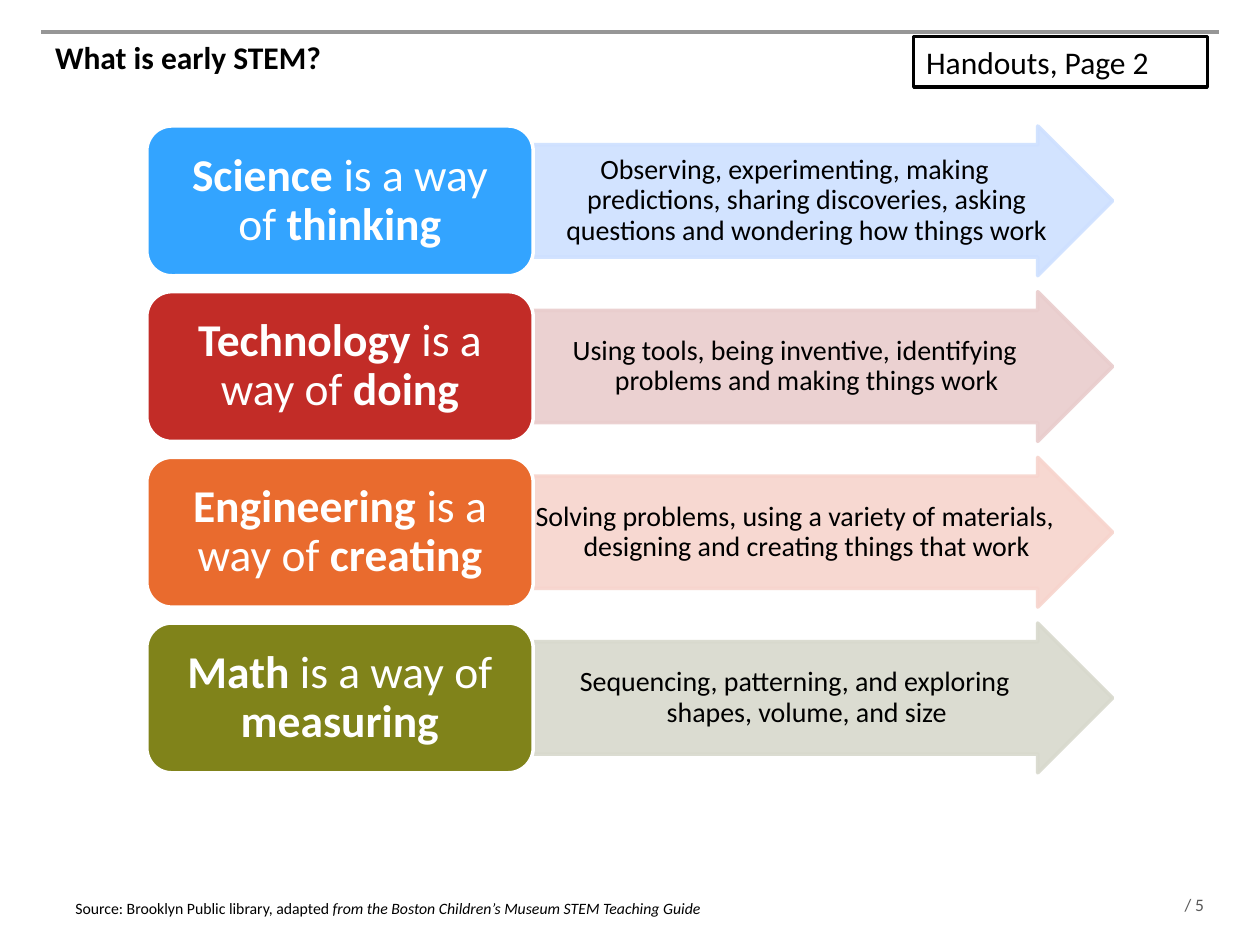
"""Build the slide that explains early STEM with four ways of working."""
from dataclasses import dataclass

from lxml import etree
from pptx import Presentation
from pptx.dml.color import RGBColor
from pptx.enum.shapes import MSO_CONNECTOR, MSO_SHAPE
from pptx.enum.text import MSO_ANCHOR, PP_ALIGN
from pptx.oxml.ns import qn
from pptx.util import Cm, Pt

ARROW, BOX, RECTANGLE = MSO_SHAPE.RIGHT_ARROW, MSO_SHAPE.ROUNDED_RECTANGLE, MSO_SHAPE.RECTANGLE
LEFT, CENTER = PP_ALIGN.LEFT, PP_ALIGN.CENTER
TOP, MIDDLE = MSO_ANCHOR.TOP, MSO_ANCHOR.MIDDLE

TITLE = "What is early STEM?"
HANDOUT = "Handouts, Page 2"
PAGE = "/ 5"
SOURCE = [("Source: Brooklyn Public library, adapted ", ""),
          ("from the Boston Children’s Museum STEM Teaching Guide", "i")]
SUBJECTS = [
    ("Science", "thinking", "33A4FF", "CEE0FF",
     "Observing, experimenting, making predictions, sharing discoveries, "
     "asking questions and wondering how things work"),
    ("Technology", "doing", "C22C27", "E9CDCD",
     "Using tools, being inventive, identifying problems and making things work"),
    ("Engineering", "creating", "E96B2E", "F7D4CD",
     "Solving problems, using a variety of materials, designing and creating things that work"),
    ("Math", "measuring", "80831A", "D8D9CD",
     "Sequencing, patterning, and exploring shapes, volume, and size"),
]

ROW_TOP, ROW_PITCH, ROW_HEIGHT = 2.54, 3.34, 3.02
BOX_LEFT, BOX_WIDTH, ARROW_WIDTH = 2.96, 7.79, 11.68


@dataclass(frozen=True)
class Theme:
    font: str = "Calibri"
    black: str = "000000"
    white: str = "FFFFFF"
    rule: str = "969696"
    page: str = "595959"
    title_size: int = 18
    subject_size: int = 26
    detail_size: int = 16
    source_size: int = 9
    page_size: int = 10
    line_width: int = 2


THEME = Theme()


def write_text(shape, text, size, color=THEME.black, style="", align=LEFT, anchor=TOP,
               margins=(0.25, 0.13), spacing=None, hanging=None, wrap=True):
    """Fill a shape with one paragraph; text is a string or (text, style) runs."""
    frame = shape.text_frame
    frame.word_wrap = wrap
    frame.vertical_anchor = anchor
    frame.margin_left = frame.margin_right = Cm(margins[0])
    frame.margin_top = frame.margin_bottom = Cm(margins[1])
    paragraph = frame.paragraphs[0]
    paragraph.alignment = align
    paragraph.line_spacing = spacing
    if hanging:
        properties = paragraph._p.get_or_add_pPr()
        properties.set("marL", str(Cm(hanging)))
        properties.set("indent", str(-Cm(hanging)))
    for content, run_style in [(text, style)] if isinstance(text, str) else text:
        run = paragraph.add_run()
        run.text = content
        run.font.name = THEME.font
        run.font.size = Pt(size)
        run.font.bold = "b" in run_style
        run.font.italic = "i" in run_style
        run.font.color.rgb = RGBColor.from_string(color)


def add_block(slide, kind, position, fill, line, opacity=None):
    """Add a filled and outlined preset shape."""
    shape = slide.shapes.add_shape(kind, *map(Cm, position))
    shape.shadow.inherit = False
    shape.fill.solid()
    shape.fill.fore_color.rgb = RGBColor.from_string(fill)
    shape.line.color.rgb = RGBColor.from_string(line)
    shape.line.width = Pt(THEME.line_width)
    if opacity:
        for color in shape._element.spPr.iter(qn("a:srgbClr")):
            etree.SubElement(color, qn("a:alpha")).set("val", str(opacity * 1000))
    return shape


def add_rule(slide):
    """Draw the line along the top of the slide."""
    rule = slide.shapes.add_connector(MSO_CONNECTOR.STRAIGHT, Cm(0.83), Cm(0.64), Cm(24.57), Cm(0.64))
    rule.line.color.rgb = RGBColor.from_string(THEME.rule)
    rule.line.width = Pt(THEME.line_width)
    etree.SubElement(rule._element.spPr, qn("a:effectLst"))


def add_subject(slide, row, subject):
    """Add one arrow with its details and the box that names the subject."""
    name, way, strong, pale, details = subject
    top = ROW_TOP + row * ROW_PITCH
    arrow = add_block(slide, ARROW, (BOX_LEFT + BOX_WIDTH, top, ARROW_WIDTH, ROW_HEIGHT),
                      pale, pale, opacity=90)
    arrow.adjustments[0], arrow.adjustments[1] = 0.75, 0.5
    write_text(arrow, details, THEME.detail_size, align=CENTER, anchor=MIDDLE,
               margins=(0.03, 0.03), spacing=0.9, hanging=0.48)
    box = add_block(slide, BOX, (BOX_LEFT, top, BOX_WIDTH, ROW_HEIGHT), strong, THEME.white)
    write_text(box, [(name, "b"), (" is a way of ", ""), (way, "b")], THEME.subject_size,
               color=THEME.white, align=CENTER, anchor=MIDDLE, margins=(0.28, 0.13), spacing=0.9)


def main():
    presentation = Presentation()
    presentation.slide_width, presentation.slide_height = Cm(25.4), Cm(19.05)
    slide = presentation.slides.add_slide(presentation.slide_layouts[5])

    add_rule(slide)
    title = slide.shapes.title
    title.left, title.top, title.width, title.height = map(Cm, (0.86, 0.64, 23.67, 2.34))
    write_text(title, TITLE, THEME.title_size, style="b")

    for row, subject in enumerate(SUBJECTS):
        add_subject(slide, row, subject)

    handout = add_block(slide, RECTANGLE, (18.42, 0.74, 5.92, 1.02), THEME.white, THEME.black)
    write_text(handout, HANDOUT, THEME.title_size)

    source = slide.shapes.add_textbox(Cm(1.27), Cm(17.98), Cm(14.45), Cm(1.02))
    write_text(source, SOURCE, THEME.source_size, wrap=False)
    page = slide.shapes.add_textbox(Cm(23.88), Cm(18.03), Cm(1.4), Cm(0.43))
    write_text(page, PAGE, THEME.page_size, color=THEME.page, margins=(0, 0))

    presentation.save("out.pptx")


if __name__ == "__main__":
    main()
